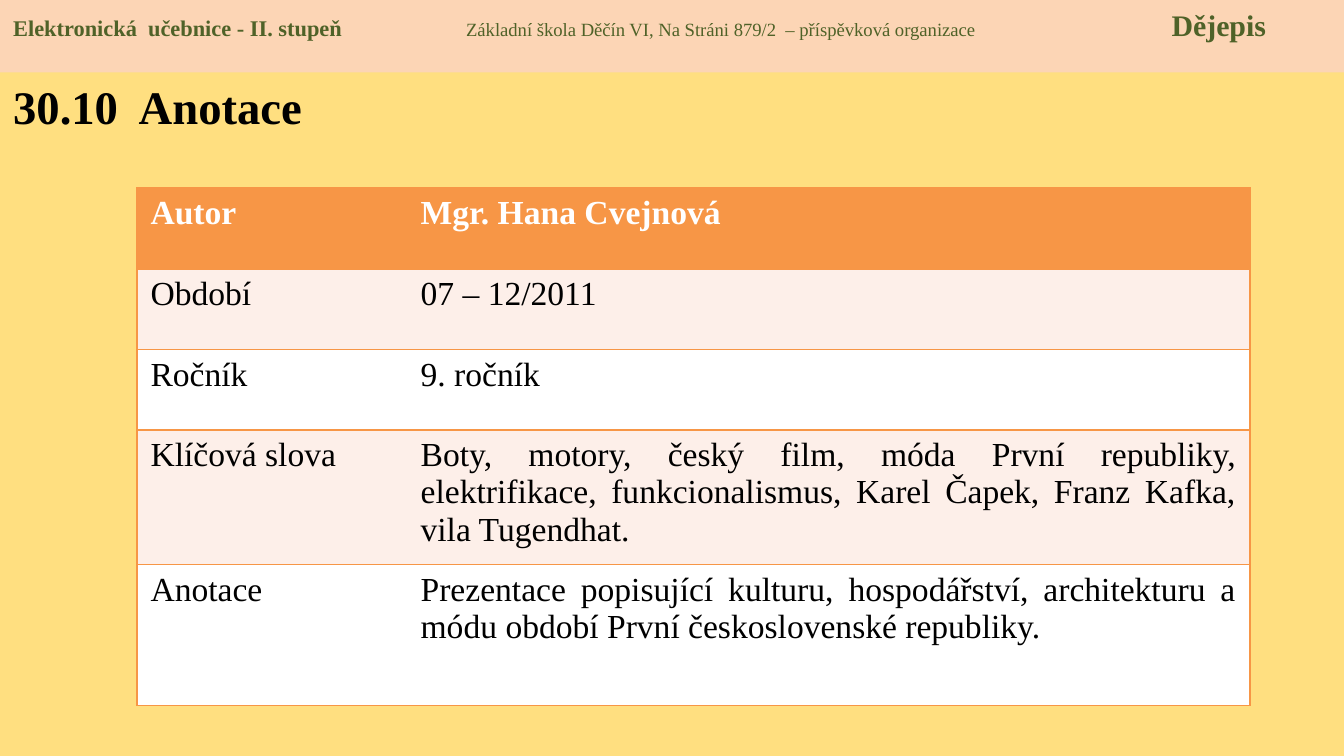
from lxml import etree
from pptx import Presentation
from pptx.dml.color import RGBColor
from pptx.enum.shapes import MSO_SHAPE
from pptx.enum.text import MSO_ANCHOR, PP_ALIGN
from pptx.oxml.ns import qn
from pptx.util import Inches, Pt

RECT = MSO_SHAPE.RECTANGLE
TOP = MSO_ANCHOR.TOP
LEFT, JUSTIFY = PP_ALIGN.LEFT, PP_ALIGN.JUSTIFY

FONT = "Times New Roman"
BLACK, WHITE = "000000", "FFFFFF"
SAND, PEACH, GREEN = "FFDF80", "FCD5B5", "4F6228"
ORANGE, BLUSH = "F79646", "FDEFE9"


def color(code):
    return RGBColor.from_string(code)


class Deck:
    def __init__(self, wide, high):
        self.deck = Presentation()
        self.deck.slide_width, self.deck.slide_height = Inches(wide), Inches(high)

    def page(self, fill):
        self.slide = self.deck.slides.add_slide(self.deck.slide_layouts[6])
        back = self.slide.background.fill
        back.solid()
        back.fore_color.rgb = color(fill)

    def run(self, para, text, size, tint, bold=False):
        run = para.add_run()
        run.text = text
        font = run.font
        font.name, font.size, font.bold = FONT, Pt(size), bold
        font.color.rgb = color(tint)

    def band(self, box, fill, runs, tint, stops):
        """Filled bar whose runs are set apart by tab stops."""
        shape = self.slide.shapes.add_shape(RECT, *map(Inches, box))
        shape.shadow.inherit = False
        shape.fill.solid()
        shape.fill.fore_color.rgb = color(fill)
        shape.line.fill.background()
        frame = shape.text_frame
        frame.word_wrap = True
        frame.vertical_anchor = TOP
        para = frame.paragraphs[0]
        para.alignment = LEFT
        tabs = etree.SubElement(para._p.get_or_add_pPr(), qn("a:tabLst"))
        for stop in stops:
            etree.SubElement(tabs, qn("a:tab"), pos=str(Inches(stop)), algn="l")
        for text, size, bold in runs:
            self.run(para, text, size, tint, bold)

    def text(self, box, words, size, tint, bold=False):
        frame = self.slide.shapes.add_textbox(*map(Inches, box)).text_frame
        frame.word_wrap = True
        self.run(frame.paragraphs[0], words, size, tint, bold)

    def edges(self, cell, sides):
        """Draw the named sides of a cell and clear the others."""
        props = cell._tc.get_or_add_tcPr()
        for side in "LRTB":
            line = etree.SubElement(props, qn("a:ln" + side), w=str(Pt(1)))
            if side in sides:
                fill = etree.SubElement(line, qn("a:solidFill"))
                etree.SubElement(fill, qn("a:srgbClr"), val=ORANGE)
            else:
                etree.SubElement(line, qn("a:noFill"))

    def table(self, left, top, cols, highs, rows, size):
        box = map(Inches, (left, top, sum(cols), sum(highs)))
        grid = self.slide.shapes.add_table(len(rows), len(cols), *box).table
        for col, wide in zip(grid.columns, cols):
            col.width = Inches(wide)
        for i, (row, high) in enumerate(zip(rows, highs)):
            grid.rows[i].height = Inches(high)
            head = i == 0
            fill = ORANGE if head else BLUSH if i % 2 else WHITE
            for j, words in enumerate(row):
                cell = grid.cell(i, j)
                self.edges(cell, "RTB" if j else "LTB")
                cell.fill.solid()
                cell.fill.fore_color.rgb = color(fill)
                para = cell.text_frame.paragraphs[0]
                para.alignment = JUSTIFY
                self.run(para, words, size, WHITE if head else BLACK, head)

    def save(self):
        self.deck.save("out.pptx")


def main():
    # Widescreen, 16 to 9
    deck = Deck(10, 10 * 9 / 16)
    deck.page(SAND)

    # Header bar
    deck.band((0, 0, 10, 0.54), PEACH, [
        ("Elektronická  učebnice - II. stupeň\t", 12, True),
        ("Základní škola Děčín VI, Na Stráni 879/2  – příspěvková organizace\t", 10, False),
        ("Dějepis", 16, True),
    ], GREEN, (3.37, 8.62))

    # Annotation table
    deck.table(1.02, 1.4, (2.01, 6.27), (0.6, 0.6, 0.6, 1, 1.05), [
        ("Autor", "Mgr. Hana Cvejnová"),
        ("Období", "07 – 12/2011"),
        ("Ročník", "9. ročník"),
        ("Klíčová slova", "Boty, motory, český film, móda První republiky, elektrifikace, "
         "funkcionalismus, Karel Čapek, Franz Kafka, vila Tugendhat."),
        ("Anotace", "Prezentace popisující kulturu, hospodářství, architekturu "
         "a módu období První československé republiky."),
    ], 18)

    # Title
    deck.text((0, 0.53, 3.74, 0.65), "30.10  Anotace", 25, BLACK, True)

    deck.save()


if __name__ == "__main__":
    main()
